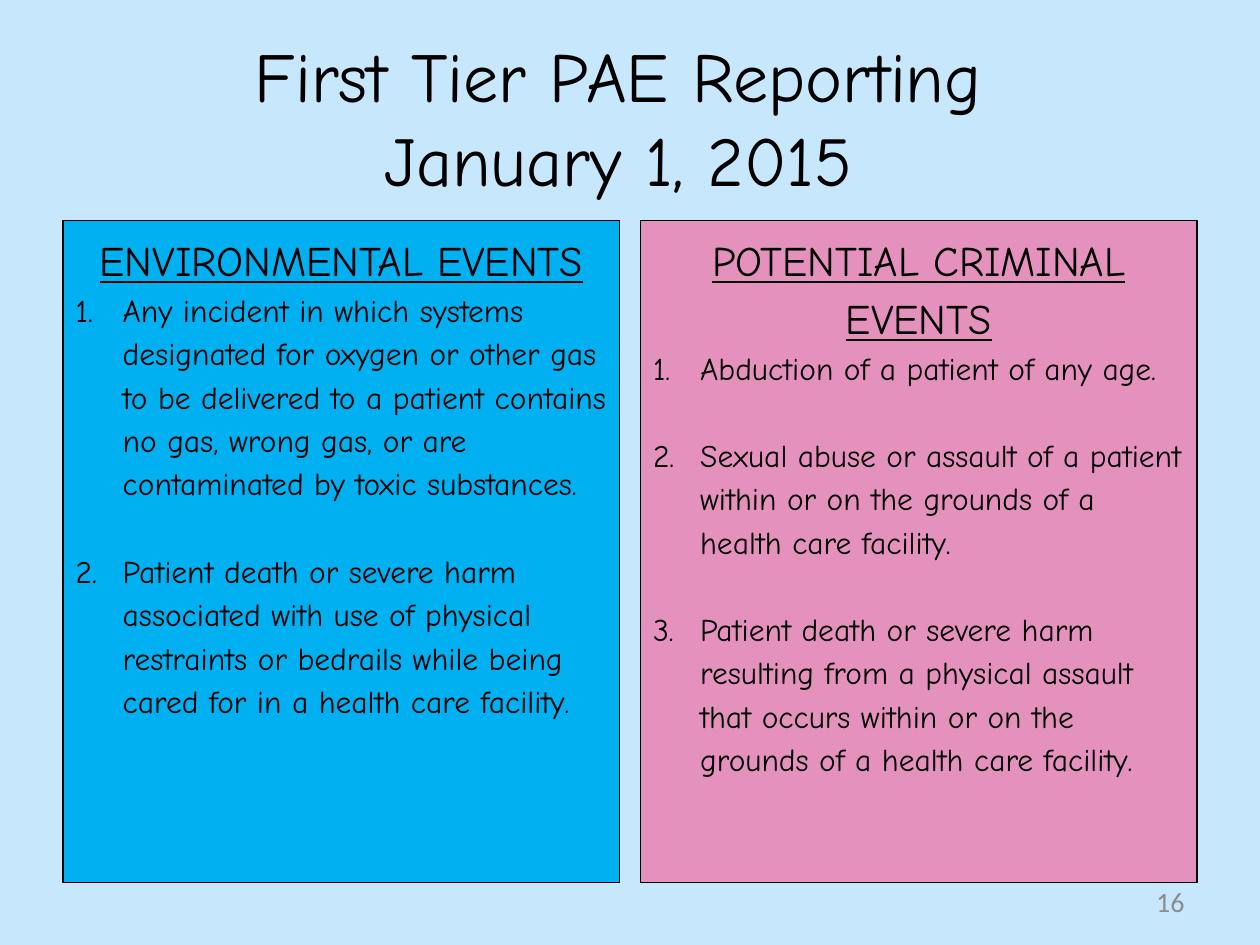
from lxml import etree
from pptx import Presentation
from pptx import util as u
from pptx.dml.color import RGBColor
from pptx.enum import text
from pptx.oxml.ns import qn

COLORS = {
    "background": "C6E7FC",
    "environmental": "00B0F0",
    "criminal": "E591BD",
    "ink": "000000",
    "page": "8C8C8C",
}
PANELS = [
    ("environmental", "ENVIRONMENTAL EVENTS", [
        "Any incident in which systems designated for oxygen or other gas to be "
        "delivered to a patient contains no gas, wrong gas, or are contaminated "
        "by toxic substances.",
        "Patient death or severe harm associated with use of physical restraints "
        "or bedrails while being cared for in a health care facility.",
    ]),
    ("criminal", "POTENTIAL CRIMINAL EVENTS", [
        "Abduction of a patient of any age.",
        "Sexual abuse or assault of a patient within or on the grounds of a "
        "health care facility.",
        "Patient death or severe harm resulting from a physical assault that "
        "occurs within or on the grounds of a health care facility.",
    ]),
]


def write(paragraph, words, size, font="Comic Neue", color="ink", align="LEFT",
          underline=False, spacing=1.0, after=0, bullet=None, indent=0):
    """Fill one paragraph; bullet is None, "buNone" or "buAutoNum"."""
    paragraph.text = words
    paragraph.alignment = text.PP_ALIGN[align]
    paragraph.line_spacing = spacing
    paragraph.space_before = u.Pt(0)
    paragraph.space_after = u.Pt(after)
    for run in paragraph.runs:
        run.font.name = font
        run.font.size = u.Pt(size)
        run.font.underline = underline
        run.font.color.rgb = RGBColor.from_string(COLORS[color])
    if bullet:
        properties = paragraph._p.get_or_add_pPr()
        properties.set("marL", str(indent))
        properties.set("indent", str(-indent))
        mark = etree.SubElement(properties, qn("a:" + bullet))
        if bullet == "buAutoNum":
            mark.set("type", "arabicPeriod")


def place(shape, left, top, width, height, anchor):
    shape.left, shape.top = u.Cm(left), u.Cm(top)
    shape.width, shape.height = u.Cm(width), u.Cm(height)
    frame = shape.text_frame
    frame.word_wrap = True
    frame.auto_size = text.MSO_AUTO_SIZE.NONE
    frame.vertical_anchor = text.MSO_ANCHOR[anchor]
    return frame


# Slide and background
deck = Presentation()
deck.slide_width, deck.slide_height = u.Cm(25.4), u.Cm(19.05)
slide = deck.slides.add_slide(deck.slide_layouts.get_by_name("Two Content"))
slide.background.fill.solid()
slide.background.fill.fore_color.rgb = RGBColor.from_string(COLORS["background"])

# Title
heading = place(slide.shapes.title, 1.27, 0.76, 22.86, 3.18, "MIDDLE")
write(heading.paragraphs[0], "First Tier PAE Reporting \vJanuary 1, 2015 ", 40,
      align="CENTER")

# Two event panels, side by side
margin, panel_width, pitch = 1.27, 11.22, 11.64
for column, (category, caption, events) in enumerate(PANELS):
    panel = slide.placeholders[column + 1]
    events_frame = place(panel, margin + column * pitch, 4.45, panel_width, 13.34,
                         "TOP")
    panel.fill.solid()
    panel.fill.fore_color.rgb = RGBColor.from_string(COLORS[category])
    panel.line.color.rgb = RGBColor.from_string(COLORS["ink"])
    panel.line.width = u.Pt(0.75)
    write(events_frame.paragraphs[0], caption, 24, align="CENTER", underline=True,
          spacing=1.15, bullet="buNone")
    for number, event in enumerate(events, 1):
        write(events_frame.add_paragraph(), event, 18, spacing=1.15,
              after=25 if number < len(events) else 0,
              bullet="buAutoNum", indent=u.Cm(0.95))

# Page number
page = place(slide.shapes.add_textbox(0, 0, 0, 0), 18.2, 17.65, 5.93, 1.02, "MIDDLE")
write(page.paragraphs[0], "16", 16, font="Calibri", color="page", align="RIGHT")

deck.save("out.pptx")
